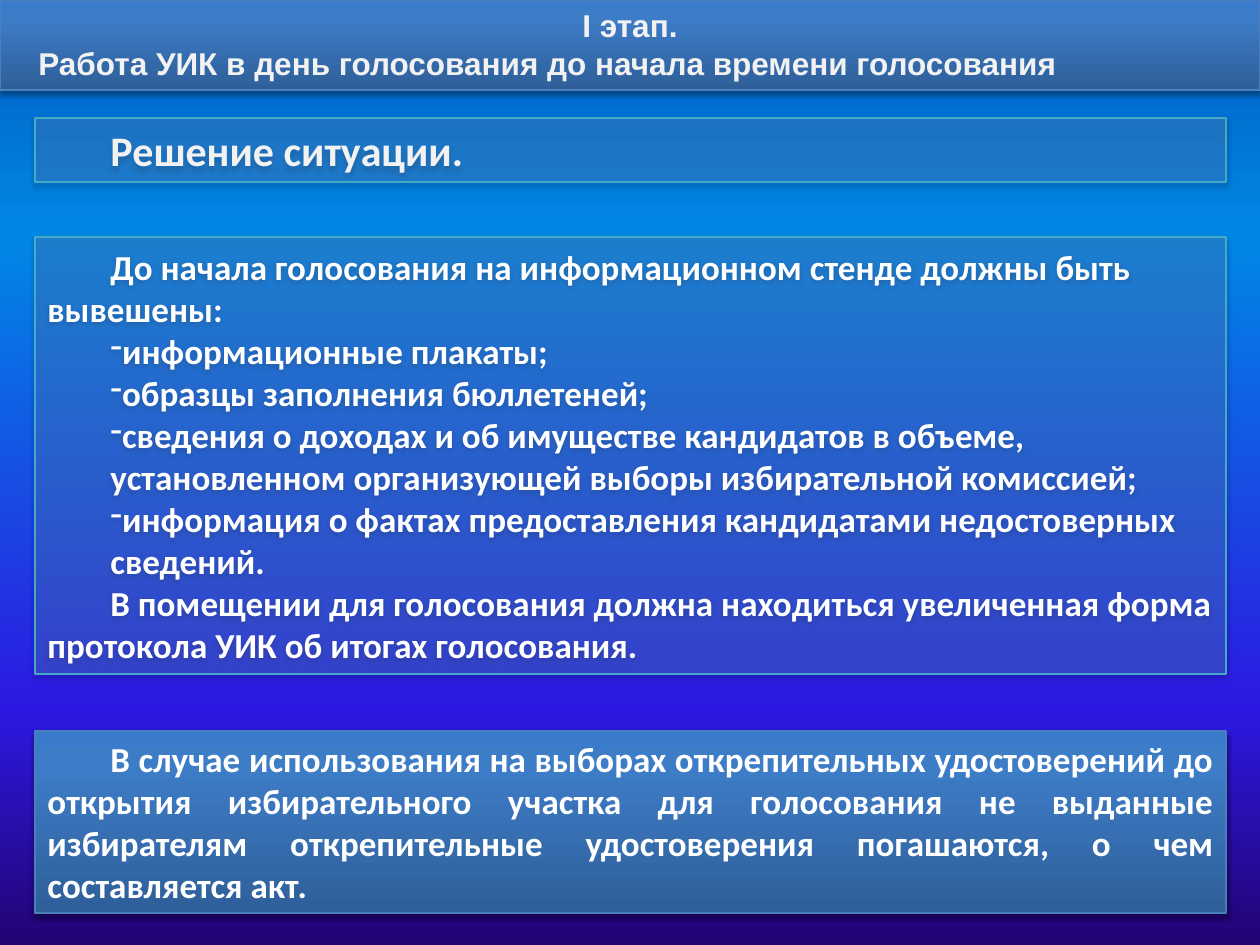
from lxml.etree import SubElement
from pptx import Presentation
from pptx.dml.color import RGBColor
from pptx.enum.shapes import MSO_SHAPE
from pptx.enum.text import MSO_ANCHOR as Anchor, MSO_AUTO_SIZE as AutoSize, PP_ALIGN as Align
from pptx.oxml.ns import qn
from pptx.util import Emu, Pt

SCALE = 914400 / 126
WHITE = RGBColor(0xFF, 0xFF, 0xFF)
PALE = RGBColor(0xF2, 0xF2, 0xF2)
BLACK = RGBColor(0x00, 0x00, 0x00)
GLASS = RGBColor(0x55, 0x8E, 0xD5)
TEAL = RGBColor(0x46, 0xAA, 0xC5)
BLUE = RGBColor(0x4B, 0x7E, 0xBC)
SKY_STOPS = ((0, RGBColor(0x23, 0x03, 0x73)), (25, RGBColor(0x2C, 0x19, 0xE1)),
             (75, RGBColor(0x00, 0x87, 0xE6)), (100, RGBColor(0x00, 0x5C, 0xBF)))
STEEL_STOPS = ((0, RGBColor(0x2F, 0x5F, 0x99)), (80, RGBColor(0x3D, 0x7C, 0xC7)),
               (100, RGBColor(0x3A, 0x7C, 0xCB)))

LEFT, WIDTH, INDENT = 35, 1191, 63
RULES = (
    ("", "До начала голосования на информационном стенде должны быть вывешены:"),
    ("-", "информационные плакаты;"),
    ("-", "образцы заполнения бюллетеней;"),
    ("-", "сведения о доходах и об имуществе кандидатов в объеме,"),
    ("", "установленном организующей выборы избирательной комиссией;"),
    ("-", "информация о фактах предоставления кандидатами недостоверных"),
    ("", "сведений."),
    ("", "В помещении для голосования должна находиться увеличенная форма "
         "протокола УИК об итогах голосования."),
)
TICKETS = ("В случае использования на выборах открепительных удостоверений до открытия "
           "избирательного участка для голосования не выданные избирателям открепительные "
           "удостоверения погашаются, о чем составляется акт.")


def px(length):
    """Turn whole pixels into EMU."""
    return Emu(round(length * SCALE))


class Deck:
    """Holds the presentation, its current slide and the shared style."""

    def __init__(self, width, height):
        self.presentation = Presentation()
        self.presentation.slide_width, self.presentation.slide_height = px(width), px(height)
        self.slide = self.presentation.slides.add_slide(self.presentation.slide_layouts[6])

    def color(self, parent, color, alpha=100):
        """Write a colour with its opacity in percent."""
        element = SubElement(parent, qn("a:srgbClr"), val=str(color))
        if alpha < 100:
            SubElement(element, qn("a:alpha"), val=str(alpha * 1000))

    def gradient(self, fill, owner, stops):
        """Fill from bottom to top through the given stops."""
        fill.gradient()
        fill.gradient_angle = 90
        stop_list = next(owner.iter(qn("a:gsLst")))
        for old_stop in list(stop_list):
            stop_list.remove(old_stop)
        for position, color in stops:
            self.color(SubElement(stop_list, qn("a:gs"), pos=str(position * 1000)), color)

    def background(self, stops):
        """Paint the slide background."""
        self.gradient(self.slide.background.fill, self.slide.element, stops)

    def shadow(self, shape):
        """Drop a soft shadow below the shape."""
        shape.shadow.inherit = False
        effects = shape.element.spPr.find(qn("a:effectLst"))
        outer = SubElement(effects, qn("a:outerShdw"), blurRad="40000", dist="23000",
                           dir="5400000", rotWithShape="0")
        self.color(outer, BLACK, 35)

    def panel(self, left, top, width, height, glass=False):
        """Add a glass or steel rectangle and return its text frame."""
        shape = self.slide.shapes.add_shape(
            MSO_SHAPE.RECTANGLE, px(left), px(top), px(width), px(height))
        if glass:
            shape.fill.solid()
            shape.fill.fore_color.rgb = GLASS
            fill_color = next(shape.element.spPr.iter(qn("a:srgbClr")))
            SubElement(fill_color, qn("a:alpha"), val="33000")
        else:
            self.gradient(shape.fill, shape.element.spPr, STEEL_STOPS)
        shape.line.color.rgb = TEAL if glass else BLUE
        shape.line.width = Pt(0.75)
        self.shadow(shape)
        frame = shape.text_frame
        frame.word_wrap = True
        frame.auto_size = AutoSize.SHAPE_TO_FIT_TEXT
        frame.vertical_anchor = Anchor.MIDDLE if glass else Anchor.TOP
        return frame

    def text(self, frame, text, size, color=WHITE, font="Calibri", align=Align.LEFT,
             indent=INDENT, bullet=""):
        """Write the next bold paragraph of a panel."""
        paragraph = frame.paragraphs[0] if not frame.text else frame.add_paragraph()
        paragraph.text = text
        paragraph.alignment = align
        properties = paragraph._p.get_or_add_pPr()
        properties.set("marL", "0")
        properties.set("indent", str(px(indent)))
        if bullet:
            SubElement(properties, qn("a:buFontTx"))
            SubElement(properties, qn("a:buChar"), char=bullet)
        paragraph.font.size = Pt(size)
        paragraph.font.bold = True
        paragraph.font.name = font
        paragraph.font.color.rgb = color


def main():
    deck = Deck(1260, 945)
    deck.background(SKY_STOPS)

    title = deck.panel(0, 0, 1260, 90)
    deck.text(title, "I\u00a0этап.", 18, PALE, "Arial", Align.CENTER, 0)
    deck.text(title, "Работа УИК в день голосования до начала времени голосования",
              18, PALE, "Arial", indent=26)

    rules = deck.panel(LEFT, 237, WIDTH, 437, glass=True)
    for bullet, rule in RULES:
        deck.text(rules, rule, 20, bullet=bullet)

    tickets = deck.panel(LEFT, 731, WIDTH, 182)
    deck.text(tickets, TICKETS, 20, align=Align.JUSTIFY)

    heading = deck.panel(LEFT, 118, WIDTH, 64, glass=True)
    deck.text(heading, "Решение ситуации.", 24, PALE, align=Align.JUSTIFY)

    deck.presentation.save("out.pptx")


if __name__ == "__main__":
    main()
